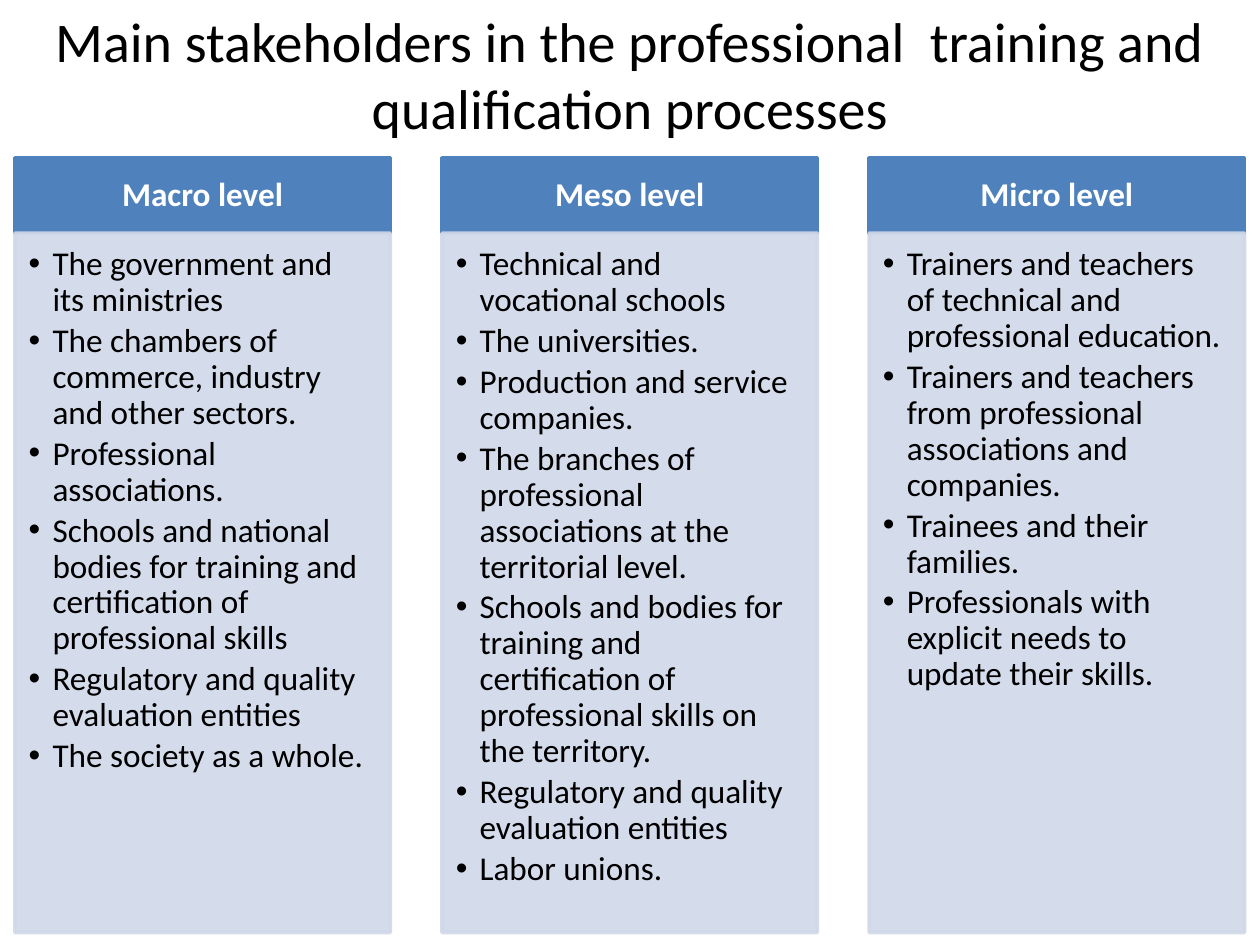
from dataclasses import dataclass

from lxml.etree import SubElement
from pptx import Presentation
from pptx.dml.color import RGBColor
from pptx.enum.shapes import MSO_SHAPE
from pptx.enum.text import MSO_ANCHOR, MSO_AUTO_SIZE, PP_ALIGN
from pptx.oxml.ns import qn
from pptx.shapes.autoshape import Shape
from pptx.slide import Slide
from pptx.util import Cm, Pt

BLUE = RGBColor(0x4F, 0x81, 0xBD)
PALE = RGBColor(0xD0, 0xD8, 0xE8)
BLACK = RGBColor(0, 0, 0)
WHITE = RGBColor(0xFF, 0xFF, 0xFF)

LEFT, STEP, WIDTH = 0.3, 8.61, 7.57
TOP, HEAD, BODY = 3.18, 1.52, 14.1
INDENT = Cm(0.48)


@dataclass
class Level:
    name: str
    items: list[str]


LEVELS = [
    Level("Macro level", [
        "The government and its ministries",
        "The chambers of commerce, industry and other sectors.",
        "Professional associations.",
        "Schools and national bodies for training and certification of professional skills",
        "Regulatory and quality evaluation entities",
        "The society as a whole.",
    ]),
    Level("Meso level", [
        "Technical and vocational schools",
        "The universities.",
        "Production and service companies.",
        "The branches of professional associations at the territorial level.",
        "Schools and bodies for training and certification of professional skills on the territory.",
        "Regulatory and quality evaluation entities",
        "Labor unions.",
    ]),
    Level("Micro level", [
        "Trainers and teachers of technical and professional education.",
        "Trainers and teachers from professional associations and companies.",
        "Trainees and their families.",
        "Professionals with explicit needs to update their skills.",
    ]),
]


def write(shape: Shape, lines: list[str], *, size: float = 19,
          color: RGBColor = BLACK, bold: bool = False,
          align: PP_ALIGN = PP_ALIGN.CENTER, anchor: MSO_ANCHOR = MSO_ANCHOR.TOP,
          inset: tuple[float, ...] = (0.25, 0.13, 0.25, 0.13),
          pitch: float = 1.0, after: float = 0, bullet: bool = False) -> None:
    """Fill a shape with paragraphs; inset is left, top, right, bottom in cm."""
    frame = shape.text_frame
    frame.word_wrap = True
    frame.vertical_anchor = anchor
    (frame.margin_left, frame.margin_top,
     frame.margin_right, frame.margin_bottom) = map(Cm, inset)
    for i, line in enumerate(lines):
        para = frame.add_paragraph() if i else frame.paragraphs[0]
        para.alignment = align
        para.line_spacing = pitch
        para.space_after = Pt(after)
        run = para.add_run()
        run.text = line
        font = run.font
        font.name, font.size, font.bold = "Calibri", Pt(size), bold
        font.color.rgb = color
        if bullet:
            para.level = 1
            props = para._p.get_or_add_pPr()
            props.set("marL", str(INDENT))
            props.set("indent", str(-INDENT))
            SubElement(props, qn("a:buFont"), typeface="Arial")
            SubElement(props, qn("a:buChar"), char="•")


def panel(slide: Slide, left: float, top: float, height: float,
          color: RGBColor, alpha: int = 100) -> Shape:
    """Draw a column block whose fill and line share one colour and opacity."""
    box = slide.shapes.add_shape(
        MSO_SHAPE.RECTANGLE, Cm(left), Cm(top), Cm(WIDTH), Cm(height))
    box.shadow.inherit = False
    box.fill.solid()
    box.fill.fore_color.rgb = color
    box.line.color.rgb = color
    box.line.width = Pt(2)
    if alpha < 100:
        for tint in box._element.spPr.iter(qn("a:srgbClr")):
            SubElement(tint, qn("a:alpha"), val=str(alpha * 1000))
    return box


def column(slide: Slide, left: float, level: Level) -> None:
    head = panel(slide, left, TOP, HEAD, BLUE)
    write(head, [level.name], color=WHITE, bold=True, anchor=MSO_ANCHOR.MIDDLE,
          inset=(0.38, 0.2, 0.38, 0.2), pitch=0.9)
    body = panel(slide, left, TOP + HEAD, BODY, PALE, alpha=90)
    write(body, level.items, align=PP_ALIGN.LEFT, inset=(0.28, 0.28, 0.38, 0.43),
          pitch=0.9, after=2.85, bullet=True)


def main() -> None:
    deck = Presentation()
    deck.slide_width, deck.slide_height = Cm(25.4), Cm(19.05)
    slide = deck.slides.add_slide(deck.slide_layouts[6])
    title = slide.shapes.add_textbox(0, 0, deck.slide_width, Cm(3))
    write(title, ["Main stakeholders in the professional  training and qualification processes"],
          size=32)
    title.text_frame.auto_size = MSO_AUTO_SIZE.SHAPE_TO_FIT_TEXT
    for i, level in enumerate(LEVELS):
        column(slide, LEFT + i * STEP, level)
    deck.save("out.pptx")


if __name__ == "__main__":
    main()
